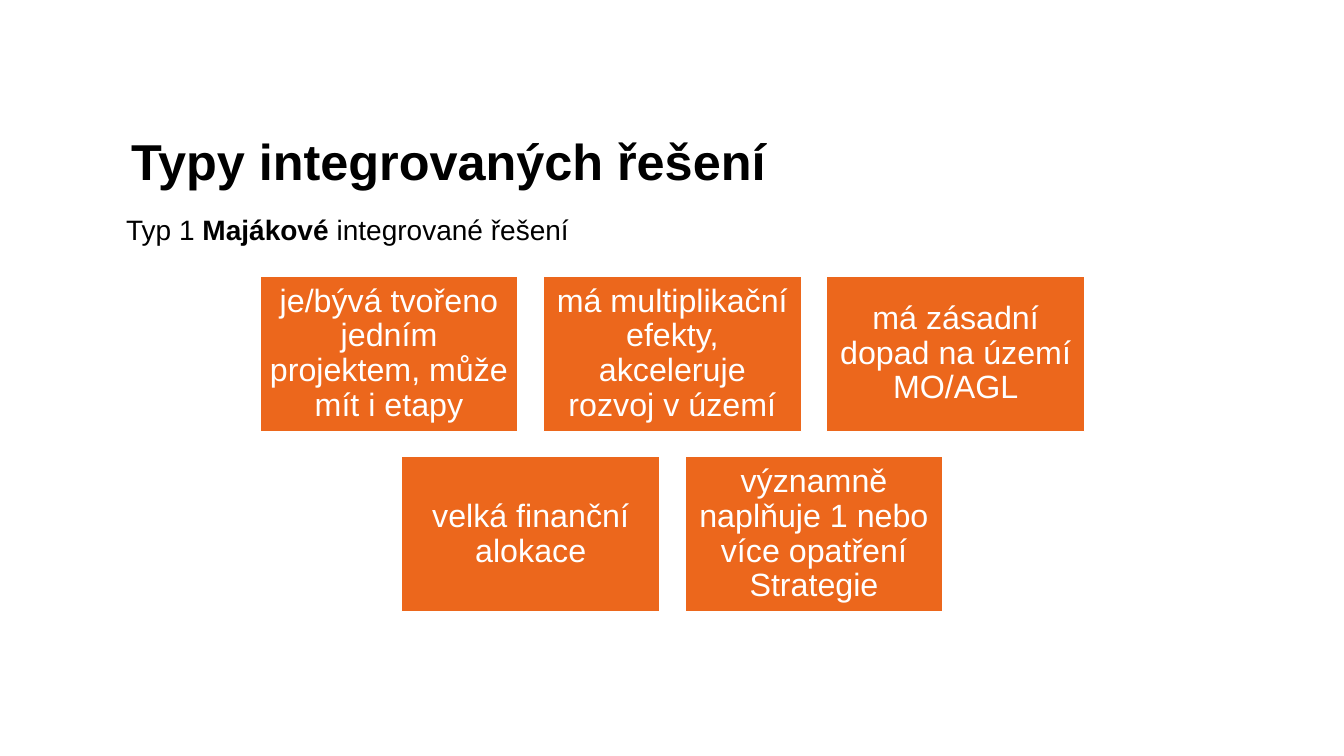
from pptx import Presentation
from pptx.dml.color import RGBColor
from pptx.enum.shapes import MSO_SHAPE
from pptx.enum.text import MSO_ANCHOR, MSO_AUTO_SIZE, PP_ALIGN
from pptx.util import Inches, Pt
from lxml import etree

BLACK = RGBColor(0x00, 0x00, 0x00)
WHITE = RGBColor(0xFF, 0xFF, 0xFF)
ORANGE = RGBColor(0xEC, 0x67, 0x1C)
FONT = "Arial"
DRAWING_NS = "http://schemas.openxmlformats.org/drawingml/2006/main"

BOX_W, BOX_H, GAP = 2.56, 1.54, 0.25
CENTER_X, GRID_TOP = 6.67, 2.74
FEATURE_ROWS = [
    ["je/bývá tvořeno jedním projektem, může mít i etapy",
     "má multiplikační efekty, akceleruje rozvoj v území",
     "má zásadní dopad na území MO/AGL"],
    ["velká finanční alokace",
     "významně naplňuje 1 nebo více opatření Strategie"],
]


def add_run(p, text, size, color, bold=False):
    r = p.add_run()
    r.text = text
    r.font.name = FONT
    r.font.size = Pt(size)
    r.font.bold = bold
    r.font.color.rgb = color


def fill_placeholder(sp, box, anchor, size, runs):
    """Place a placeholder and write (text, bold) runs into one plain line."""
    sp.left, sp.top, sp.width, sp.height = map(Inches, box)
    tf = sp.text_frame
    tf.word_wrap = True
    tf.auto_size = MSO_AUTO_SIZE.NONE
    tf.vertical_anchor = anchor
    p = tf.paragraphs[0]
    p.alignment = PP_ALIGN.LEFT
    p.line_spacing = 0.9
    p.space_before = Pt(0)
    pPr = p._p.get_or_add_pPr()
    pPr.set("marL", "0")
    pPr.set("indent", "0")
    etree.SubElement(pPr, f"{{{DRAWING_NS}}}buNone")
    for text, bold in runs:
        add_run(p, text, size, BLACK, bold)


def add_feature_box(s, left, top, text):
    sp = s.shapes.add_shape(MSO_SHAPE.RECTANGLE, Inches(left), Inches(top),
                            Inches(BOX_W), Inches(BOX_H))
    sp.shadow.inherit = False
    sp.fill.solid()
    sp.fill.fore_color.rgb = ORANGE
    sp.line.color.rgb = WHITE
    sp.line.width = Pt(1)
    tf = sp.text_frame
    tf.word_wrap = True
    tf.vertical_anchor = MSO_ANCHOR.MIDDLE
    tf.margin_left = tf.margin_right = Inches(0.09)
    tf.margin_top = tf.margin_bottom = Inches(0.09)
    p = tf.paragraphs[0]
    p.alignment = PP_ALIGN.CENTER
    p.line_spacing = 0.9
    add_run(p, text, 23, WHITE)


def add_feature_grid(s):
    """Stack the rows of boxes, each row centred on the same axis."""
    for i, row in enumerate(FEATURE_ROWS):
        row_width = len(row) * (BOX_W + GAP) - GAP
        for j, text in enumerate(row):
            add_feature_box(s, CENTER_X - row_width / 2 + j * (BOX_W + GAP),
                            GRID_TOP + i * (BOX_H + GAP), text)


def main():
    prs = Presentation()
    prs.slide_width, prs.slide_height = Inches(13.33), Inches(7.5)
    s = prs.slides.add_slide(prs.slide_layouts[1])
    fill_placeholder(s.shapes.title, (1.2, 1.26, 11.5, 0.73), MSO_ANCHOR.MIDDLE, 36,
                     [("Typy integrovaných řešení", True)])
    fill_placeholder(s.placeholders[1], (1.15, 2.1, 11.2, 0.42), MSO_ANCHOR.TOP, 20,
                     [("Typ 1 ", False), ("Majákové ", True),
                      ("integrované řešení", False)])
    add_feature_grid(s)
    prs.save("out.pptx")


if __name__ == "__main__":
    main()
